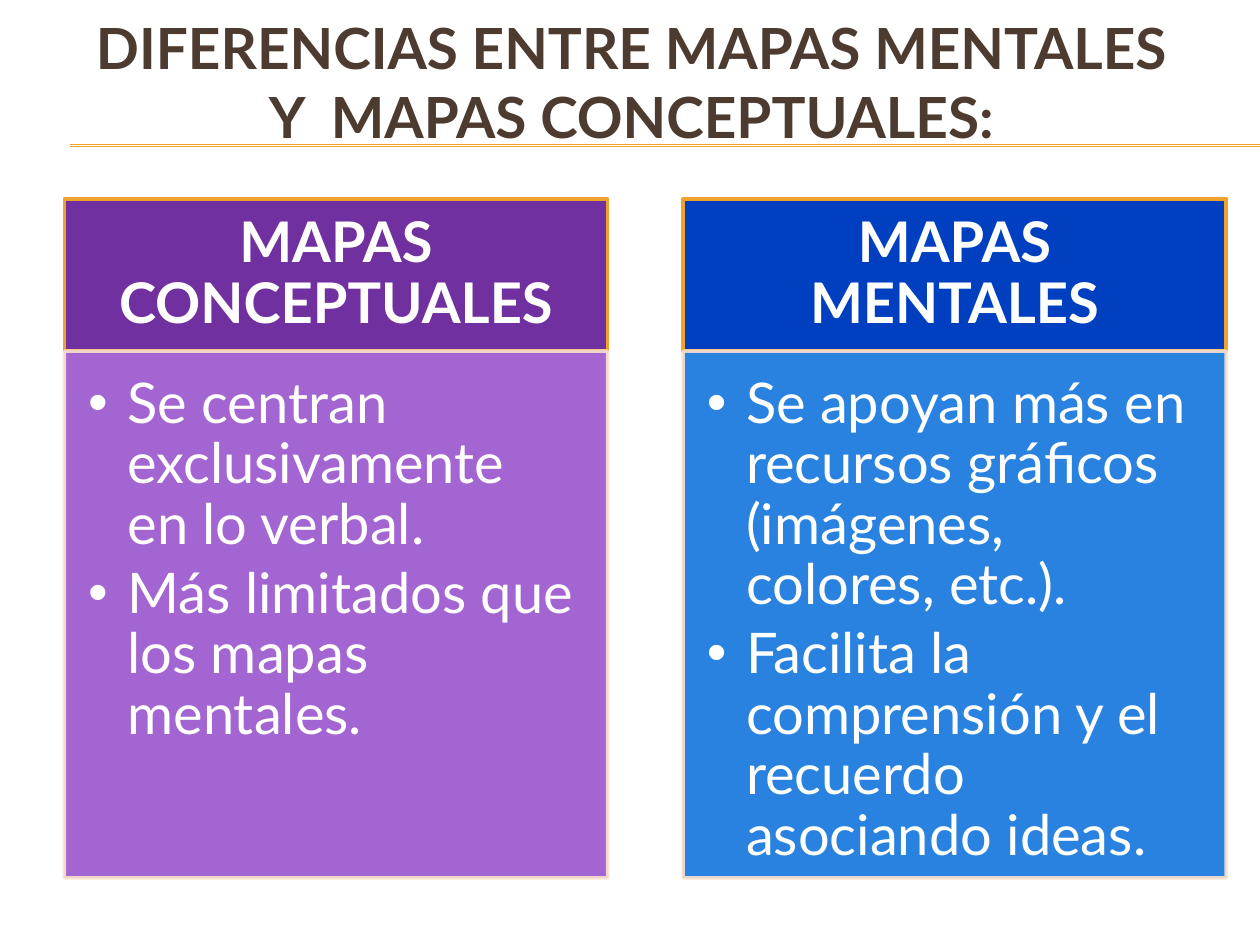
from dataclasses import dataclass
from typing import Any

from lxml.etree import SubElement as Sub
from pptx import Presentation as Deck
from pptx.dml.color import RGBColor as Rgb
from pptx.enum.shapes import MSO_CONNECTOR as Link, MSO_SHAPE as Shape
from pptx.enum.text import MSO_ANCHOR as Anchor, PP_ALIGN as Align
from pptx.oxml.ns import qn
from pptx.util import Cm, Pt


@dataclass(frozen=True)
class Theme:
    face: str = "Lato"
    brown: str = "4E3B30"
    gold: str = "F0A22E"
    cream: str = "F9E0CD"
    white: str = "FFFFFF"
    title: float = 32.4
    text: float = 32
    rule: float = 0.75
    edge: float = 2


@dataclass(frozen=True)
class Panel:
    head: str
    points: tuple[str, ...]
    dark: str
    light: str


@dataclass(frozen=True)
class Box:
    left: float
    top: float
    width: float
    height: float

    def place(self) -> tuple[Cm, ...]:
        return tuple(Cm(v) for v in (self.left, self.top, self.width, self.height))


THEME = Theme()
LEFT, TOP, WIDTH, STEP = 1.3, 4.01, 10.95, 12.47
HEAD, BODY = 3.07, 10.62
RULES = (2.92, 2.95)
PANELS = (
    Panel("MAPAS CONCEPTUALES",
          ("Se centran exclusivamente en lo verbal.",
           "Más limitados que los mapas mentales."),
          "7030A0", "A365D1"),
    Panel("MAPAS MENTALES",
          ("Se apoyan más en recursos gráficos (imágenes, colores, etc.).",
           "Facilita la comprensión y el recuerdo asociando ideas."),
          "0040C0", "2982DF"),
)
TITLE_FRAME = {"word_wrap": True, "vertical_anchor": Anchor.MIDDLE}
HEAD_FRAME = TITLE_FRAME | {
    "margin_left": Cm(0.64), "margin_right": Cm(0.64),
    "margin_top": Cm(0.36), "margin_bottom": Cm(0.36),
}
BODY_FRAME = {
    "word_wrap": True, "vertical_anchor": Anchor.TOP,
    "margin_left": Cm(0.48), "margin_right": Cm(0.64),
    "margin_top": Cm(0.48), "margin_bottom": Cm(0.71),
}
TITLE_PARA = {"alignment": Align.CENTER}
HEAD_PARA = TITLE_PARA | {"line_spacing": 0.9}
BODY_PARA = {"alignment": Align.LEFT, "line_spacing": 0.9, "space_after": Pt(4.8)}
TITLE_FONT = {"name": THEME.face, "size": Pt(THEME.title), "bold": True}
HEAD_FONT = TITLE_FONT | {"size": Pt(THEME.text)}
BODY_FONT = HEAD_FONT | {"bold": False}


def apply(item: Any, values: dict[str, Any]) -> None:
    for name, value in values.items():
        setattr(item, name, value)


def mark(para: Any) -> None:
    props = para._p.get_or_add_pPr()
    props.set("marL", str(Cm(0.79)))
    props.set("indent", str(-Cm(0.79)))
    Sub(props, qn("a:buFont"), typeface="Arial")
    Sub(props, qn("a:buChar"), char="•")


def write(frame: Any, lines: tuple[str, ...], look: dict[str, Any],
          form: dict[str, Any], font: dict[str, Any], tint: str,
          listed: bool = False) -> None:
    apply(frame, look)
    for i, line in enumerate(lines):
        para = frame.add_paragraph() if i else frame.paragraphs[0]
        apply(para, form)
        if listed:
            mark(para)
        run = para.add_run()
        run.text = line
        apply(run.font, font)
        run.font.color.rgb = Rgb.from_string(tint)


def block(slide: Any, box: Box, fill: str, edge: str) -> Any:
    shape = slide.shapes.add_shape(Shape.RECTANGLE, *box.place())
    shape.shadow.inherit = False
    shape.fill.solid()
    shape.fill.fore_color.rgb = Rgb.from_string(fill)
    shape.line.width = Pt(THEME.edge)
    shape.line.color.rgb = Rgb.from_string(edge)
    return shape


def fade(shape: Any, share: int) -> None:
    for tint in shape.line._get_or_add_ln().iter(qn("a:srgbClr")):
        Sub(tint, qn("a:alpha"), val=str(share * 1000))


def rule(slide: Any, y: float) -> None:
    line = slide.shapes.add_connector(
        Link.STRAIGHT, Cm(1.42), Cm(y), Cm(25.4), Cm(y))
    line.line.width = Pt(THEME.rule)
    line.line.color.rgb = Rgb.from_string(THEME.gold)
    Sub(line._element.spPr, qn("a:effectLst"))


def draw(slide: Any, panel: Panel, left: float) -> None:
    head = block(slide, Box(left, TOP, WIDTH, HEAD), panel.dark, THEME.gold)
    write(head.text_frame, (panel.head,), HEAD_FRAME, HEAD_PARA, HEAD_FONT,
          THEME.white)
    body = block(slide, Box(left, TOP + HEAD, WIDTH, BODY), panel.light,
                 THEME.cream)
    fade(body, 90)
    write(body.text_frame, panel.points, BODY_FRAME, BODY_PARA, BODY_FONT,
          THEME.white, listed=True)


def main() -> None:
    deck = Deck()
    apply(deck, {"slide_width": Cm(25.4), "slide_height": Cm(19.05)})
    slide = deck.slides.add_slide(deck.slide_layouts[6])
    for y in RULES:
        rule(slide, y)
    title = slide.shapes.add_textbox(*Box(LEFT, 0.05, 22.86, 3.18).place())
    write(title.text_frame,
          ("DIFERENCIAS ENTRE MAPAS MENTALES Y  MAPAS CONCEPTUALES:",),
          TITLE_FRAME, TITLE_PARA, TITLE_FONT, THEME.brown)
    for i, panel in enumerate(PANELS):
        draw(slide, panel, LEFT + i * STEP)
    deck.save("out.pptx")


if __name__ == "__main__":
    main()
